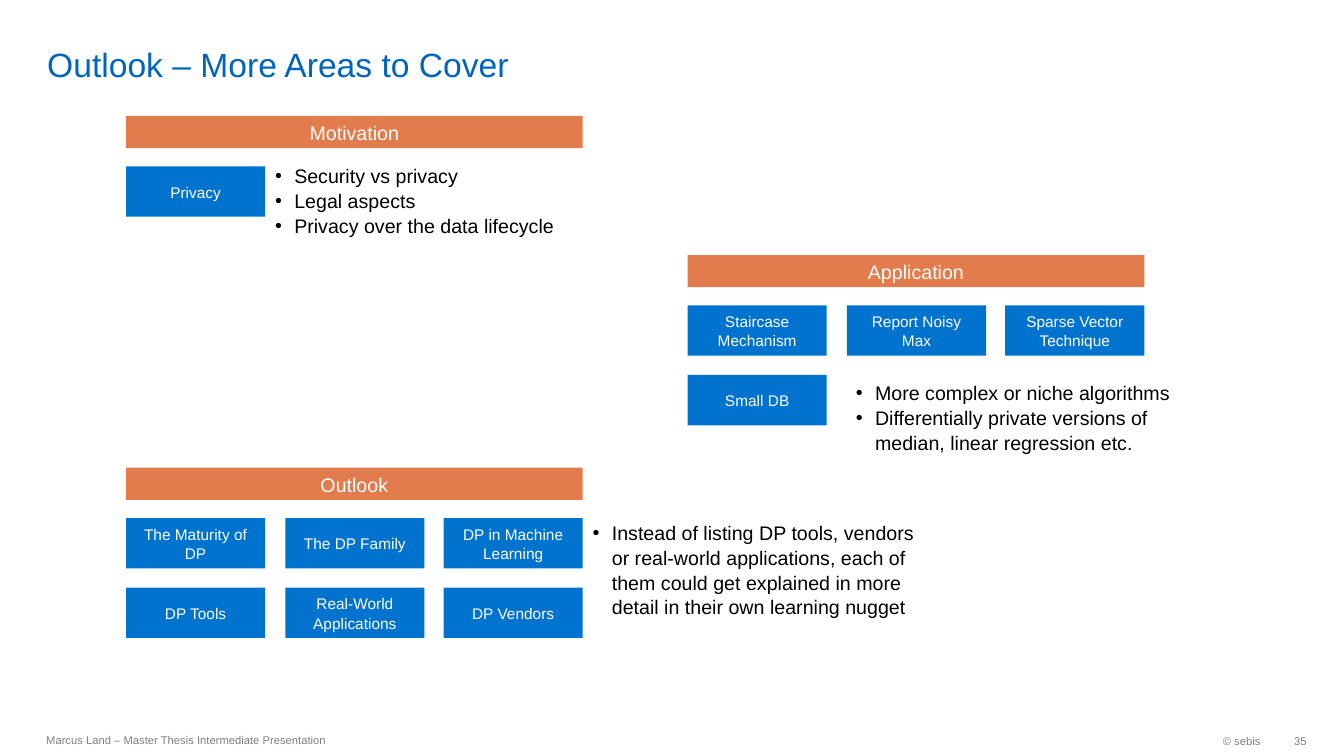
from dataclasses import dataclass

from lxml import etree
from pptx import Presentation
from pptx import util as u
from pptx.dml.color import RGBColor
from pptx.enum import shapes, text
from pptx.oxml import ns

PX = 9144
TITLE_BLUE = RGBColor(0x00, 0x65, 0xBD)
TOPIC_BLUE = RGBColor(0x00, 0x73, 0xCF)
HEADER_ORANGE = RGBColor(0xE3, 0x7C, 0x4D)
FOOTER_GRAY = RGBColor(0x80, 0x80, 0x80)
WHITE = RGBColor(0xFF, 0xFF, 0xFF)
BLACK = RGBColor(0x00, 0x00, 0x00)

TOPIC_WIDTH, TOPIC_HEIGHT = 138, 50
HEADER_WIDTH, HEADER_HEIGHT = 453, 32
COLUMNS = 3
COLUMN_PITCH = (HEADER_WIDTH - TOPIC_WIDTH) / (COLUMNS - 1)
ROW_PITCH = 69
TOPICS_OFFSET = 50
BULLET_INDENT = 19


@dataclass(frozen=True)
class Box:
    left: int
    top: int
    width: int
    height: int

    def emu(self) -> tuple[int, int, int, int]:
        return self.left * PX, self.top * PX, self.width * PX, self.height * PX


@dataclass(frozen=True)
class Label:
    box: Box
    wording: str
    size: int
    color: RGBColor
    align: text.PP_ALIGN = text.PP_ALIGN.LEFT
    anchor: text.MSO_ANCHOR = text.MSO_ANCHOR.MIDDLE
    margin_right: int = 10
    margin_vertical: int = 5


@dataclass(frozen=True)
class Chapter:
    left: int
    top: int
    heading: str
    topics: tuple[str, ...]
    bullet_box: Box
    bullets: tuple[str, ...]


LABELS = (
    Label(Box(37, 5, 1158, 79), "Outlook – More Areas to Cover", 24, TITLE_BLUE,
          anchor=text.MSO_ANCHOR.BOTTOM, margin_vertical=0),
    Label(Box(1026, 719, 234, 32), "© sebis", 8, FOOTER_GRAY, text.PP_ALIGN.RIGHT),
    Label(Box(36, 718, 630, 32), "Marcus Land – Master Thesis Intermediate Presentation",
          8, FOOTER_GRAY),
    Label(Box(1260, 719, 36, 32), "35", 8, FOOTER_GRAY, text.PP_ALIGN.RIGHT, margin_right=0),
)

CHAPTERS = (
    Chapter(125, 115, "Motivation", ("Privacy",), Box(263, 157, 315, 81),
            ("Security vs privacy", "Legal aspects", "Privacy over the data lifecycle")),
    Chapter(682, 253, "Application",
            ("Staircase Mechanism", "Report Noisy Max", "Sparse Vector Technique", "Small DB"),
            Box(839, 372, 348, 81),
            ("More complex or niche algorithms",
             "Differentially private versions of median, linear regression etc.")),
    Chapter(125, 464, "Outlook",
            ("The Maturity of DP", "The DP Family", "DP in Machine Learning",
             "DP Tools", "Real-World Applications", "DP Vendors"),
            Box(578, 511, 348, 104),
            ("Instead of listing DP tools, vendors or real-world applications, each of them "
             "could get explained in more detail in their own learning nugget",)),
)


def style(paragraph, size: int, color: RGBColor, align: text.PP_ALIGN) -> None:
    paragraph.alignment = align
    paragraph.font.name = "Arial"
    paragraph.font.size = u.Pt(size)
    paragraph.font.color.rgb = color


def add_label(slide, label: Label) -> None:
    frame = slide.shapes.add_textbox(*label.box.emu()).text_frame
    frame.word_wrap = True
    frame.vertical_anchor = label.anchor
    frame.margin_right = label.margin_right * PX
    frame.margin_top = frame.margin_bottom = label.margin_vertical * PX
    frame.text = label.wording
    style(frame.paragraphs[0], label.size, label.color, label.align)


def add_tile(slide, box: Box, wording: str, fill: RGBColor, size: int) -> None:
    shape = slide.shapes.add_shape(shapes.MSO_SHAPE.RECTANGLE, *box.emu())
    shape.shadow.inherit = False
    shape.fill.solid()
    shape.fill.fore_color.rgb = fill
    shape.line.fill.background()
    frame = shape.text_frame
    frame.word_wrap = True
    frame.vertical_anchor = text.MSO_ANCHOR.MIDDLE
    frame.text = wording
    frame.paragraphs[0].line_spacing = 1.05
    style(frame.paragraphs[0], size, WHITE, text.PP_ALIGN.CENTER)


def add_bullets(slide, box: Box, bullets: tuple[str, ...]) -> None:
    frame = slide.shapes.add_textbox(*box.emu()).text_frame
    frame.word_wrap = True
    frame.text = "\n".join(bullets)
    for paragraph in frame.paragraphs:
        paragraph.line_spacing = 1.05
        properties = paragraph._p.get_or_add_pPr()
        properties.set("marL", str(BULLET_INDENT * PX))
        properties.set("indent", str(-BULLET_INDENT * PX))
        etree.SubElement(properties, ns.qn("a:buFont"), typeface="Arial")
        etree.SubElement(properties, ns.qn("a:buChar"), char="•")
        style(paragraph, 14, BLACK, text.PP_ALIGN.LEFT)


def add_chapter(slide, chapter: Chapter) -> None:
    heading_box = Box(chapter.left, chapter.top, HEADER_WIDTH, HEADER_HEIGHT)
    add_tile(slide, heading_box, chapter.heading, HEADER_ORANGE, 14)
    for index, topic in enumerate(chapter.topics):
        row, column = divmod(index, COLUMNS)
        left = chapter.left + round(column * COLUMN_PITCH)
        top = chapter.top + TOPICS_OFFSET + row * ROW_PITCH
        add_tile(slide, Box(left, top, TOPIC_WIDTH, TOPIC_HEIGHT), topic, TOPIC_BLUE, 11)
    add_bullets(slide, chapter.bullet_box, chapter.bullets)


def main() -> None:
    presentation = Presentation()
    presentation.slide_width = 1333 * PX
    presentation.slide_height = 750 * PX
    slide = presentation.slides.add_slide(presentation.slide_layouts[6])
    for label in LABELS:
        add_label(slide, label)
    for chapter in CHAPTERS:
        add_chapter(slide, chapter)
    presentation.save("out.pptx")


if __name__ == "__main__":
    main()
